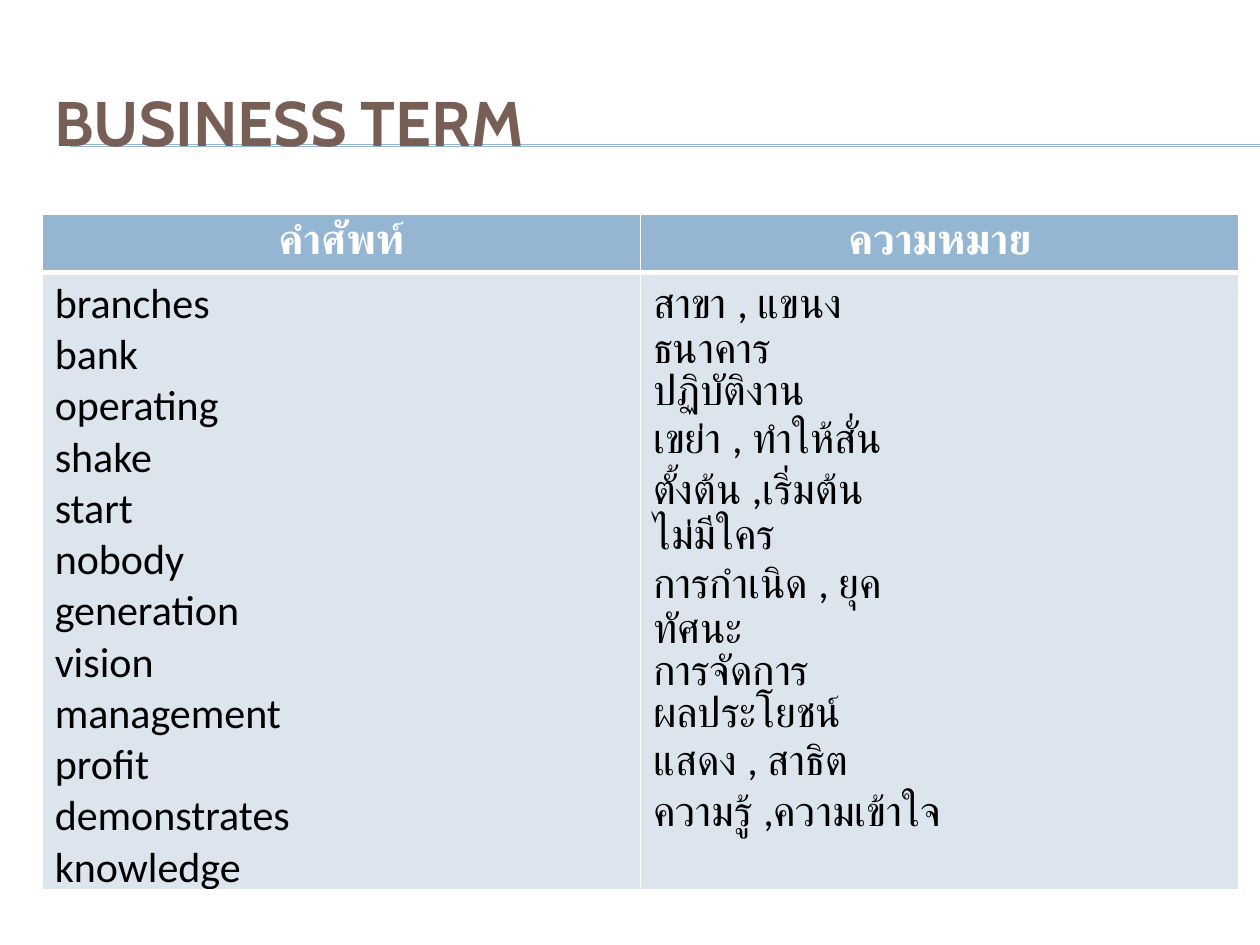
from lxml.etree import SubElement
from pptx import Presentation
from pptx.dml.color import RGBColor
from pptx.enum.shapes import MSO_CONNECTOR
from pptx.enum.text import MSO_ANCHOR, PP_ALIGN
from pptx.oxml.ns import qn
from pptx.util import Cm, Pt

COLORS = {
    "accent": "94B6D2",
    "title": "775F55",
    "body": "DCE5EE",
    "white": "FFFFFF",
    "black": "000000",
}
HEADERS = ["คำศัพท์", "ความหมาย"]
TERMS = [
    ("branches", "สาขา , แขนง"),
    ("bank", "ธนาคาร"),
    ("operating", "ปฏิบัติงาน"),
    ("shake", "เขย่า , ทำให้สั่น"),
    ("start", "ตั้งต้น ,เริ่มต้น"),
    ("nobody", "ไม่มีใคร"),
    ("generation", "การกำเนิด , ยุค"),
    ("vision", "ทัศนะ"),
    ("management", "การจัดการ"),
    ("profit", "ผลประโยชน์"),
    ("demonstrates", "แสดง , สาธิต"),
    ("knowledge", "ความรู้ ,ความเข้าใจ"),
]
TITLE_FONT = {"name": "Cabin", "size": Pt(36), "bold": True}
HEADER_FONT = {"name": "Calibri", "size": Pt(24), "bold": True}
BODY_FONT = {"name": "Calibri", "size": Pt(24), "bold": False}
HEADER_MARGINS = {
    "margin_left": Cm(0.18), "margin_right": Cm(0.18),
    "margin_top": 0, "margin_bottom": 0,
}
LEFT, WIDTH = Cm(0.85), Cm(24.13)


def rgb(name):
    return RGBColor.from_string(COLORS[name])


def set_attrs(obj, values):
    for key, value in values.items():
        setattr(obj, key, value)


def add_run(p, text, font, color):
    r = p.add_run()
    r.text = text
    set_attrs(r.font, font)
    r.font.color.rgb = rgb(color)


def add_rule(slide, y):
    line = slide.shapes.add_connector(
        MSO_CONNECTOR.STRAIGHT, Cm(1.42), y, Cm(25.4), y)
    line.line.color.rgb = rgb("accent")
    line.line.width = Pt(0.75)
    SubElement(line._element.spPr, qn("a:effectLst"))


def add_title(slide, text):
    tf = slide.shapes.add_textbox(LEFT, Cm(1.27), WIDTH, Cm(2.34)).text_frame
    set_attrs(tf, {"word_wrap": True, "vertical_anchor": MSO_ANCHOR.MIDDLE})
    add_run(tf.paragraphs[0], text, TITLE_FONT, "title")


def set_borders(cell, bottom):
    """Draw white borders, 1 pt wide except for the bottom one."""
    tc_pr = cell._tc.get_or_add_tcPr()
    widths = {"lnL": 1, "lnR": 1, "lnT": 1, "lnB": bottom}
    for i, (tag, width) in enumerate(widths.items()):
        ln = tc_pr.makeelement(qn(f"a:{tag}"), {"w": str(Pt(width))})
        fill = SubElement(ln, qn("a:solidFill"))
        SubElement(fill, qn("a:srgbClr"), val=COLORS["white"])
        tc_pr.insert(i, ln)


def fill_cell(cell, lines, font, color, fill, bottom=1, **p_format):
    cell.fill.solid()
    cell.fill.fore_color.rgb = rgb(fill)
    set_borders(cell, bottom)
    tf = cell.text_frame
    for i, text in enumerate(lines):
        p = tf.add_paragraph() if i else tf.paragraphs[0]
        set_attrs(p, p_format)
        add_run(p, text, font, color)


def add_term_table(slide):
    table = slide.shapes.add_table(
        2, 2, LEFT, Cm(4.32), WIDTH, Cm(2.08)).table
    for col, (header, words) in enumerate(zip(HEADERS, zip(*TERMS))):
        head = table.cell(0, col)
        set_attrs(head, HEADER_MARGINS)
        fill_cell(head, [header], HEADER_FONT, "white", "accent", bottom=3,
                  alignment=PP_ALIGN.CENTER, line_spacing=1.15)
        fill_cell(table.cell(1, col), words, BODY_FONT, "black", "body")


def main():
    prs = Presentation()
    prs.slide_width, prs.slide_height = Cm(25.4), Cm(19.05)
    slide = prs.slides.add_slide(prs.slide_layouts[6])
    for y in (Cm(2.92), Cm(2.95)):
        add_rule(slide, y)
    add_title(slide, "BUSINESS TERM")
    add_term_table(slide)
    prs.save("out.pptx")


if __name__ == "__main__":
    main()
